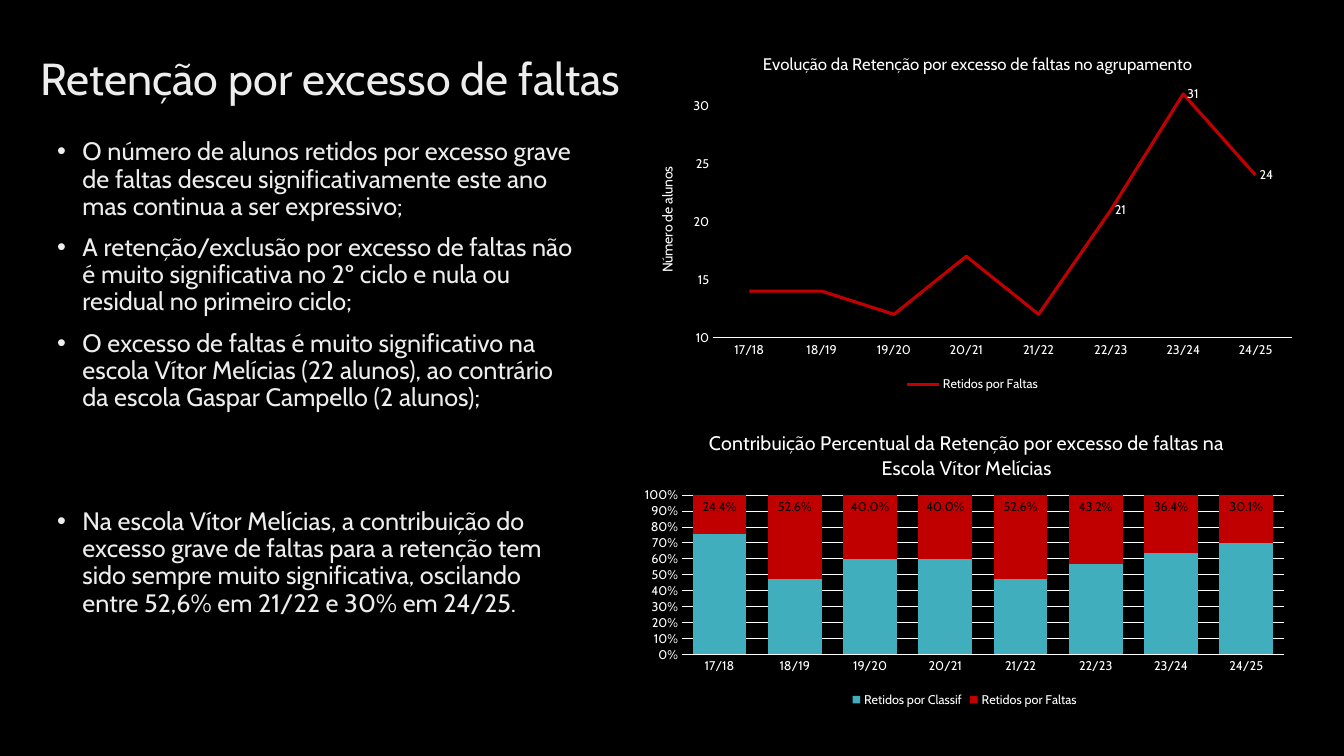
"""Build a slide on pupils held back for excessive absences, with two charts."""
from lxml import etree
from pptx import Presentation
from pptx.chart.data import CategoryChartData
from pptx.dml.color import RGBColor
from pptx.enum.chart import XL_CHART_TYPE, XL_LABEL_POSITION, XL_LEGEND_POSITION, XL_MARKER_STYLE, XL_TICK_MARK
from pptx.enum.text import MSO_ANCHOR
from pptx.oxml import parse_xml
from pptx.oxml.ns import nsdecls, qn
from pptx.util import Cm, Pt

LINE = XL_CHART_TYPE.LINE
STACKED = XL_CHART_TYPE.COLUMN_STACKED_100
BOTTOM = XL_LEGEND_POSITION.BOTTOM
NO_TICK = XL_TICK_MARK.NONE
RIGHT = XL_LABEL_POSITION.RIGHT
INSIDE_END = XL_LABEL_POSITION.INSIDE_END
NO_MARKER = XL_MARKER_STYLE.NONE
MIDDLE = MSO_ANCHOR.MIDDLE

BLACK = RGBColor(0x00, 0x00, 0x00)
WHITE = RGBColor(0xFF, 0xFF, 0xFF)
PALE = RGBColor(0xED, 0xED, 0xED)
RED = RGBColor(0xC0, 0x00, 0x00)
TEAL = RGBColor(0x41, 0xAE, 0xBD)
FONT = "Cabin"
YEARS = [f"{year}/{year + 1}" for year in range(17, 25)]


def set_font(font, size, color):
    for key, value in {"name": FONT, "size": Pt(size), "bold": False}.items():
        setattr(font, key, value)
    font.color.rgb = color


def place(element, index, **fractions):
    for old in element.findall(qn("c:layout")):
        element.remove(old)
    layout = parse_xml(f"<c:layout {nsdecls('c')}><c:manualLayout/></c:layout>")
    if "w" in fractions:
        etree.SubElement(layout[0], qn("c:layoutTarget")).set("val", "inner")
    for axis in "xy":
        etree.SubElement(layout[0], qn(f"c:{axis}Mode")).set("val", "edge")
    for key, value in fractions.items():
        etree.SubElement(layout[0], qn(f"c:{key}")).set("val", str(value))
    element.insert(index, layout)


prs = Presentation()
prs.slide_width, prs.slide_height = Cm(33.87), Cm(19.05)
slide = prs.slides.add_slide(prs.slide_layouts[6])
slide.background.fill.solid()
slide.background.fill.fore_color.rgb = BLACK

heading = slide.shapes.add_textbox(Cm(0.76), Cm(0.79), Cm(15.16), Cm(2.51)).text_frame
heading.word_wrap = True
heading.vertical_anchor = MIDDLE
heading.margin_right = 0
heading.text = "Retenção por excesso de faltas"
heading.paragraphs[0].line_spacing = 0.9
set_font(heading.paragraphs[0].runs[0].font, 32, PALE)

FINDINGS = [
    ("O número de alunos retidos por excesso grave de faltas desceu significativamente "
     "este ano mas continua a ser expressivo;", 0),
    ("A retenção/exclusão por excesso de faltas não é muito significativa no 2º ciclo "
     "e nula ou residual no primeiro ciclo;", 10),
    ("O excesso de faltas é muito significativo na escola Vítor Melícias (22 alunos), "
     "ao contrário da escola Gaspar Campello (2 alunos);", 10),
    ("Na escola Vítor Melícias, a contribuição do excesso grave de faltas para a retenção "
     "tem sido sempre muito significativa, oscilando entre 52,6% em 21/22 e 30% em 24/25.", 69),
]
findings = slide.shapes.add_textbox(Cm(1.19), Cm(3.38), Cm(13.61), Cm(13.34)).text_frame
findings.word_wrap = True
for number, (finding, gap) in enumerate(FINDINGS):
    paragraph = findings.add_paragraph() if number else findings.paragraphs[0]
    paragraph.line_spacing = 0.9
    paragraph.space_before = Pt(gap)
    properties = paragraph._p.get_or_add_pPr()
    properties.set("marL", str(Cm(0.64)))
    properties.set("indent", str(-Cm(0.64)))
    etree.SubElement(properties, qn("a:buFont")).set("typeface", "Arial")
    etree.SubElement(properties, qn("a:buChar")).set("char", "•")
    run = paragraph.add_run()
    run.text = finding
    set_font(run.font, 18, PALE)

CHARTS = [
    {"kind": LINE, "at": (16.13, 0.79, 16.76, 9.19), "size": 12, "format": "General",
     "title": "Evolução da Retenção por excesso de faltas no agrupamento",
     "title_at": {"x": 0.18, "y": 0.05},
     "plot_at": {"x": 0.11, "y": 0.14, "w": 0.87, "h": 0.7},
     "series": [("Retidos por Faltas", (14, 14, 12, 17, 12, 21, 31, 24))]},
    {"kind": STACKED, "at": (15.93, 10.36, 16.76, 7.57), "size": 14, "format": "0%",
     "title": "Contribuição Percentual da Retenção por excesso de faltas na Escola Vítor Melícias",
     "title_at": {"x": 0.11, "y": 0.05},
     "plot_at": {"x": 0.075, "y": 0.28, "w": 0.905, "h": 0.53},
     "series": [("Retidos por Classif", (0.76, 0.47, 0.6, 0.6, 0.47, 0.57, 0.64, 0.7)),
                ("Retidos por Faltas", (0.244, 0.526, 0.4, 0.4, 0.526, 0.432, 0.364, 0.301))]},
]
charts = []
for details in CHARTS:
    data = CategoryChartData()
    data.categories = YEARS
    for name, values in details["series"]:
        data.add_series(name, values)
    chart = slide.shapes.add_chart(details["kind"], *map(Cm, details["at"]), data).chart
    set_font(chart.font, 10, WHITE)
    title = chart.chart_title
    title.text_frame.text = details["title"]
    set_font(title.text_frame.paragraphs[0].runs[0].font, details["size"], WHITE)
    title.include_in_layout = False
    place(title._element, 1, **details["title_at"])
    place(chart._chartSpace.chart.plotArea, 0, **details["plot_at"])
    chart.has_legend = True
    chart.legend.position = BOTTOM
    chart.legend.include_in_layout = False
    set_font(chart.legend.font, 9, WHITE)
    for axis in (chart.category_axis, chart.value_axis):
        axis.major_tick_mark = axis.minor_tick_mark = NO_TICK
        set_font(axis.tick_labels.font, 9, WHITE)
    chart.category_axis.format.line.color.rgb = WHITE
    chart.category_axis.format.line.width = Pt(0.75)
    chart.value_axis.format.line.fill.background()
    chart.value_axis.tick_labels.number_format = details["format"]
    chart.value_axis.tick_labels.number_format_is_linked = False
    charts.append(chart)
trend, share = charts

pupils = trend.value_axis
for key, value in {"minimum_scale": 10, "maximum_scale": 32, "major_unit": 5,
                   "has_major_gridlines": False}.items():
    setattr(pupils, key, value)
pupils_title = pupils.axis_title.text_frame
pupils_title.text = "Número de alunos"
pupils_title._txBody.bodyPr.set("rot", "-5400000")
set_font(pupils_title.paragraphs[0].runs[0].font, 10, WHITE)
absences = trend.plots[0].series[0]
absences.smooth = False
absences.marker.style = NO_MARKER
absences.format.line.color.rgb = RED
absences.format.line.width = Pt(2.25)
for year in (5, 6, 7):
    label = absences.points[year].data_label
    set_font(label.font, 9, WHITE)
    label.position = RIGHT
absences.data_labels.show_value = False

share.value_axis.major_unit = 0.1
share.value_axis.has_major_gridlines = True
share.value_axis.major_gridlines.format.line.color.rgb = WHITE
share.value_axis.major_gridlines.format.line.width = Pt(0.75)
columns = share.plots[0]
for key, value in {"gap_width": 40, "overlap": 100, "vary_by_categories": False}.items():
    setattr(columns, key, value)
for series, color in zip(columns.series, (TEAL, RED)):
    series.format.fill.solid()
    series.format.fill.fore_color.rgb = color
percentages = columns.series[1].data_labels
for key, value in {"show_value": True, "number_format": "0.0%",
                   "number_format_is_linked": False, "position": INSIDE_END}.items():
    setattr(percentages, key, value)
set_font(percentages.font, 9, BLACK)

prs.save("out.pptx")
